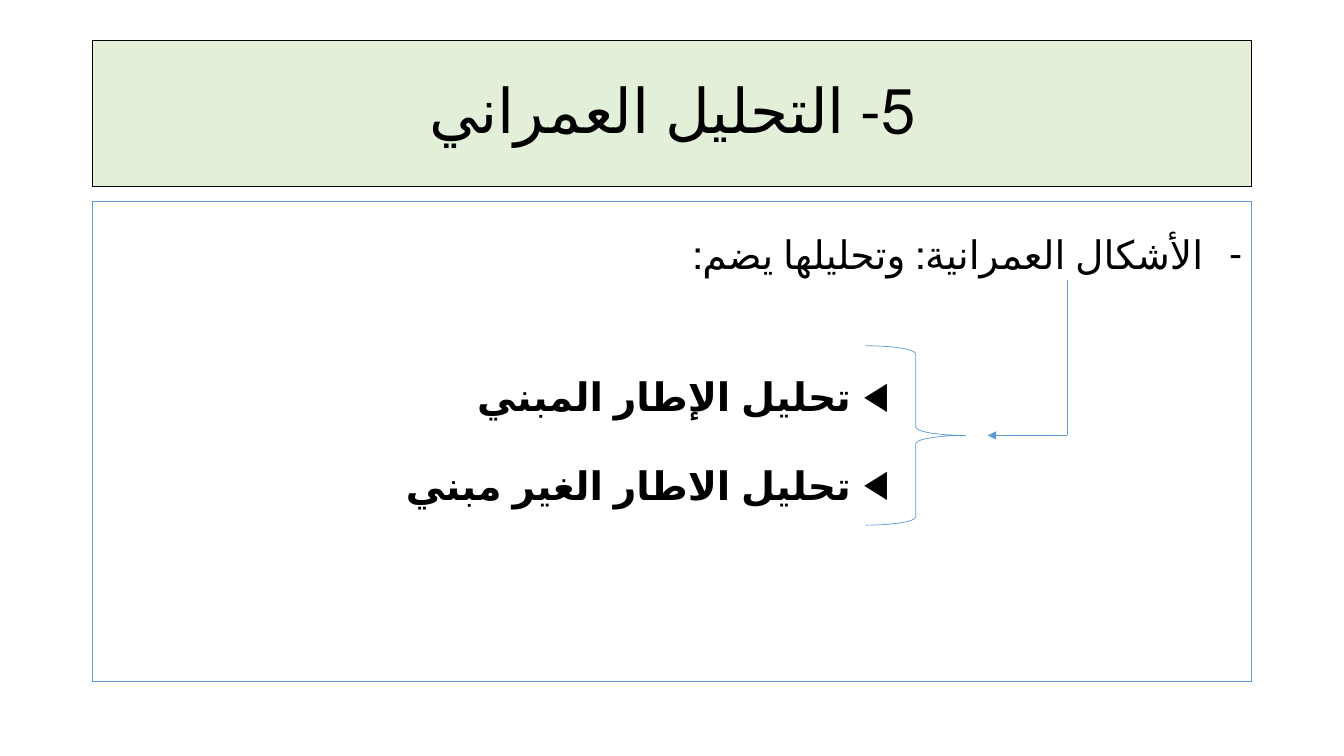
from lxml.etree import SubElement
from pptx import Presentation
from pptx.dml.color import RGBColor
from pptx.enum.shapes import MSO_CONNECTOR, MSO_SHAPE
from pptx.enum.text import MSO_ANCHOR, MSO_AUTO_SIZE, PP_ALIGN
from pptx.oxml.ns import qn
from pptx.util import Inches, Pt

BLACK = RGBColor(0x00, 0x00, 0x00)
BLUE = RGBColor(0x5B, 0x9B, 0xD5)
GREEN = RGBColor(0xE2, 0xF0, 0xD9)
FONT = "Calibri"
LANGUAGE = "ar-DZ"
LEFT, WIDTH = 0.92, 11.5


def place(shape, left, top, width, height):
    shape.left, shape.top = Inches(left), Inches(top)
    shape.width, shape.height = Inches(width), Inches(height)


def outline(shape, color, width):
    shape.line.color.rgb = color
    shape.line.width = Pt(width)


def write(paragraph, text, size, align, spacing, bold=False):
    paragraph.alignment = align
    paragraph.line_spacing = spacing
    paragraph._p.get_or_add_pPr().set("rtl", "1")
    run = paragraph.add_run()
    run.text = text
    run.font.name = FONT
    run.font.size = Pt(size)
    run.font.bold = bold
    run.font.color.rgb = BLACK
    run._r.get_or_add_rPr().set("lang", LANGUAGE)


def add_bullet(paragraph, symbol, indent):
    properties = paragraph._p.get_or_add_pPr()
    properties.set("marL", str(Inches(indent)))
    properties.set("indent", str(-Inches(0.38)))
    SubElement(properties, qn("a:buFont"), typeface="Arial")
    SubElement(properties, qn("a:buChar"), char=symbol)


def fill_title(title):
    place(title, LEFT, 0.4, WIDTH, 1.45)
    title.fill.solid()
    title.fill.fore_color.rgb = GREEN
    outline(title, BLACK, 0.75)
    frame = title.text_frame
    frame.auto_size = MSO_AUTO_SIZE.NONE
    frame.vertical_anchor = MSO_ANCHOR.MIDDLE
    write(frame.paragraphs[0], "5- التحليل العمراني", 44, PP_ALIGN.CENTER, 0.9)


def add_content(slide, heading, topics):
    content = slide.shapes.add_textbox(Inches(LEFT), Inches(2), Inches(WIDTH), Inches(4.76))
    outline(content, BLUE, 0.75)
    frame = content.text_frame
    frame.word_wrap = True
    first = frame.paragraphs[0]
    write(first, heading, 28, PP_ALIGN.JUSTIFY, 1.5)
    first.space_before = Pt(10)
    add_bullet(first, "-", 0.38)
    for index, topic in enumerate(topics):
        paragraph = frame.add_paragraph()
        write(paragraph, topic, 28, PP_ALIGN.RIGHT, 1.5, bold=True)
        paragraph.space_before = Pt(5 if index else 51)
        paragraph.space_after = Pt(8)
        add_bullet(paragraph, "◀", 3.88)


def add_brace(slide):
    brace = slide.shapes.add_shape(
        MSO_SHAPE.RIGHT_BRACE, Inches(8.59), Inches(3.43), Inches(0.99), Inches(1.78))
    brace.shadow.inherit = False
    brace.fill.background()
    outline(brace, BLUE, 0.5)


def add_line(slide, start, end, arrow=False):
    line = slide.shapes.add_connector(
        MSO_CONNECTOR.STRAIGHT, *(Inches(value) for value in start + end))
    outline(line, BLUE, 0.5)
    if arrow:
        SubElement(line.line._get_or_add_ln(), qn("a:tailEnd"), type="triangle")
    SubElement(line._element.spPr, qn("a:effectLst"))


def main():
    presentation = Presentation()
    presentation.slide_width, presentation.slide_height = Inches(40 / 3), Inches(7.5)
    slide = presentation.slides.add_slide(presentation.slide_layouts[5])
    fill_title(slide.shapes.title)
    add_content(slide, "الأشكال العمرانية: وتحليلها يضم:",
                ["تحليل الإطار المبني", "تحليل الاطار الغير مبني"])
    add_brace(slide)
    corner = (10.59, 4.32)
    add_line(slide, (10.59, 2.78), corner)
    add_line(slide, corner, (9.8, 4.32), arrow=True)
    presentation.save("out.pptx")


if __name__ == "__main__":
    main()
